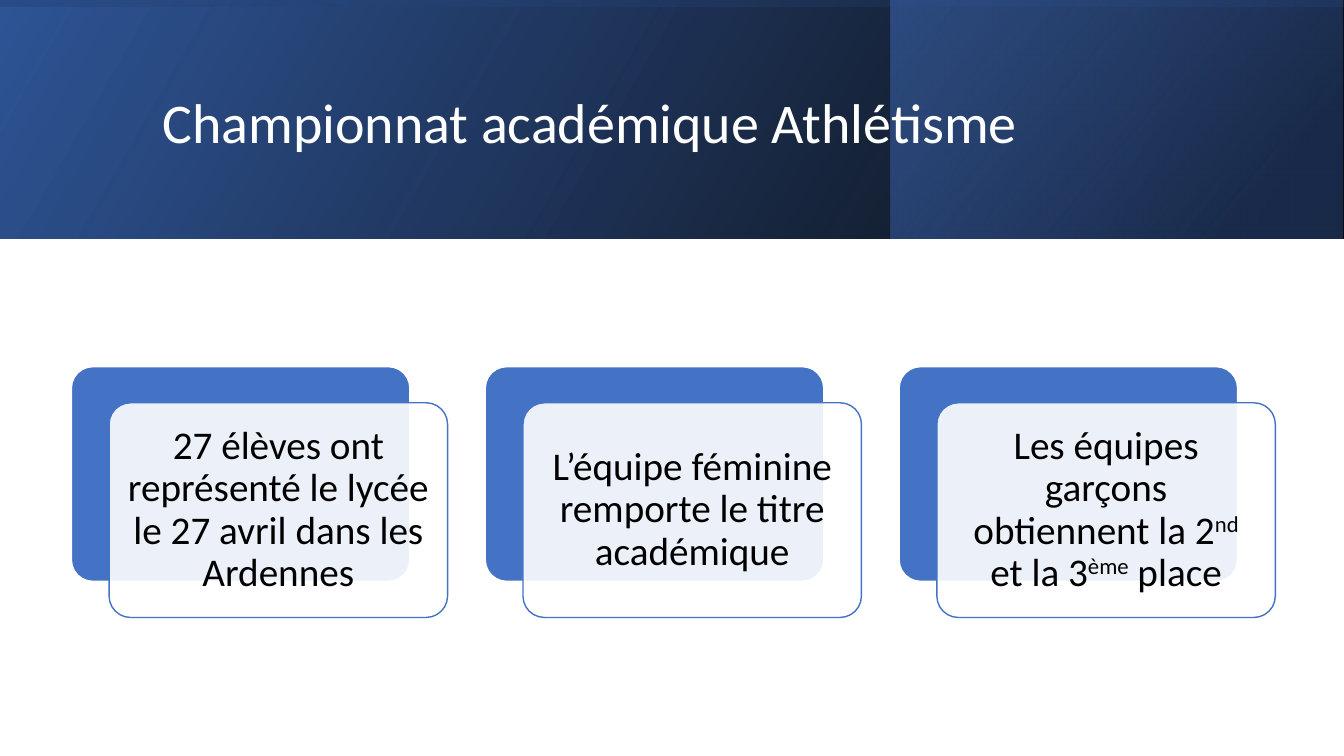
from pptx import Presentation
from pptx.dml.color import RGBColor
from pptx.enum.shapes import MSO_SHAPE
from pptx.enum.text import MSO_ANCHOR, MSO_AUTO_SIZE, PP_ALIGN
from pptx.oxml import parse_xml
from pptx.oxml.ns import nsdecls, qn
from pptx.util import Cm, Pt
from lxml.etree import SubElement

WIDE, HIGH = 33.87, 19.05
BAND = 6.02
BLUE = "4472C4"

# Left, top, width, height, rotation, angle, stops (place, colour, opacity)
BANDS = [
    (0, 0, WIDE, BAND, 0, 330, [(0, "000000", 96), (100, "2F5597", 100)]),
    (22.45, 0, 11.38, BAND, 0, 320, [(19, "203864", 68), (100, BLUE, 48)]),
    ((WIDE - BAND) / 2, (BAND - WIDE) / 2, BAND, WIDE, 270, 350,
     [(23, "2F5597", 16), (99, "000000", 45)]),
]

# Text between ^ marks is raised
CARDS = [
    "27 élèves ont représenté le lycée le 27 avril dans les Ardennes",
    "L’équipe féminine remporte le titre académique",
    "Les équipes garçons obtiennent la 2^nd^ et la 3^ème^ place",
]


def color(code):
    return RGBColor.from_string(code)


def style(run, size, code):
    run.font.name = "Calibri"
    run.font.size = Pt(size)
    run.font.color.rgb = color(code)


def add_band(slide, left, top, width, height, turn, angle, stops):
    band = slide.shapes.add_shape(
        MSO_SHAPE.RECTANGLE, Cm(left), Cm(top), Cm(width), Cm(height))
    band.shadow.inherit = False
    band.line.fill.background()
    band.rotation = turn
    props = band._element.spPr
    props.find(qn("a:xfrm")).set("flipH", "1")
    # Gradient with see-through stops
    marks = "".join(
        f'<a:gs pos="{place * 1000}"><a:srgbClr val="{code}">'
        f'<a:alpha val="{alpha * 1000}"/></a:srgbClr></a:gs>'
        for place, code, alpha in stops)
    band.fill.gradient()
    props.replace(props.find(qn("a:gradFill")), parse_xml(
        f'<a:gradFill {nsdecls("a")} rotWithShape="1"><a:gsLst>{marks}</a:gsLst>'
        f'<a:lin ang="{angle * 60000}" scaled="0"/></a:gradFill>'))


def add_title(slide, text):
    title = slide.shapes.title
    title.left, title.top = Cm(3.84), Cm(0.97)
    title.width, title.height = Cm(27), Cm(4.37)
    # Bring the title in front of the bands
    title._element.getparent().append(title._element)
    frame = title.text_frame
    frame.text = text
    frame.auto_size = MSO_AUTO_SIZE.NONE
    frame.vertical_anchor = MSO_ANCHOR.MIDDLE
    line = frame.paragraphs[0]
    line.alignment = PP_ALIGN.LEFT
    line.line_spacing = 0.9
    line.space_after = Pt(6)
    style(line.runs[0], 40, "FFFFFF")


def add_box(slide, left, top, fill, edge):
    box = slide.shapes.add_shape(
        MSO_SHAPE.ROUNDED_RECTANGLE, Cm(left), Cm(top), Cm(8.53), Cm(5.41))
    box.adjustments[0] = 0.1
    box.shadow.inherit = False
    box.fill.solid()
    box.fill.fore_color.rgb = color(fill)
    box.line.color.rgb = color(edge)
    box.line.width = Pt(1)
    return box


def add_card(slide, left, top, text):
    add_box(slide, left, top, BLUE, "FFFFFF")
    front = add_box(slide, left + 0.95, top + 0.91, "FFFFFF", BLUE)
    tint = front._element.spPr.find(qn("a:solidFill"))[0]
    SubElement(tint, qn("a:alpha")).set("val", "90000")
    # Card text
    frame = front.text_frame
    frame.word_wrap = True
    frame.vertical_anchor = MSO_ANCHOR.MIDDLE
    frame.margin_left = frame.margin_right = Cm(0.3)
    frame.margin_top = frame.margin_bottom = Cm(0.3)
    line = frame.paragraphs[0]
    line.alignment = PP_ALIGN.CENTER
    line.line_spacing = 0.9
    for index, part in enumerate(text.split("^")):
        run = line.add_run()
        run.text = part
        style(run, 28, "000000")
        if index % 2:
            run._r.get_or_add_rPr().set("baseline", "30000")


def main():
    deck = Presentation()
    deck.slide_width, deck.slide_height = Cm(WIDE), Cm(HIGH)
    slide = deck.slides.add_slide(deck.slide_layouts[5])

    # Header
    for band in BANDS:
        add_band(slide, *band)
    add_title(slide, "Championnat académique Athlétisme")

    # Row of cards
    for index, text in enumerate(CARDS):
        add_card(slide, 1.8 + index * 10.43, 9.24, text)

    deck.save("out.pptx")


if __name__ == "__main__":
    main()
